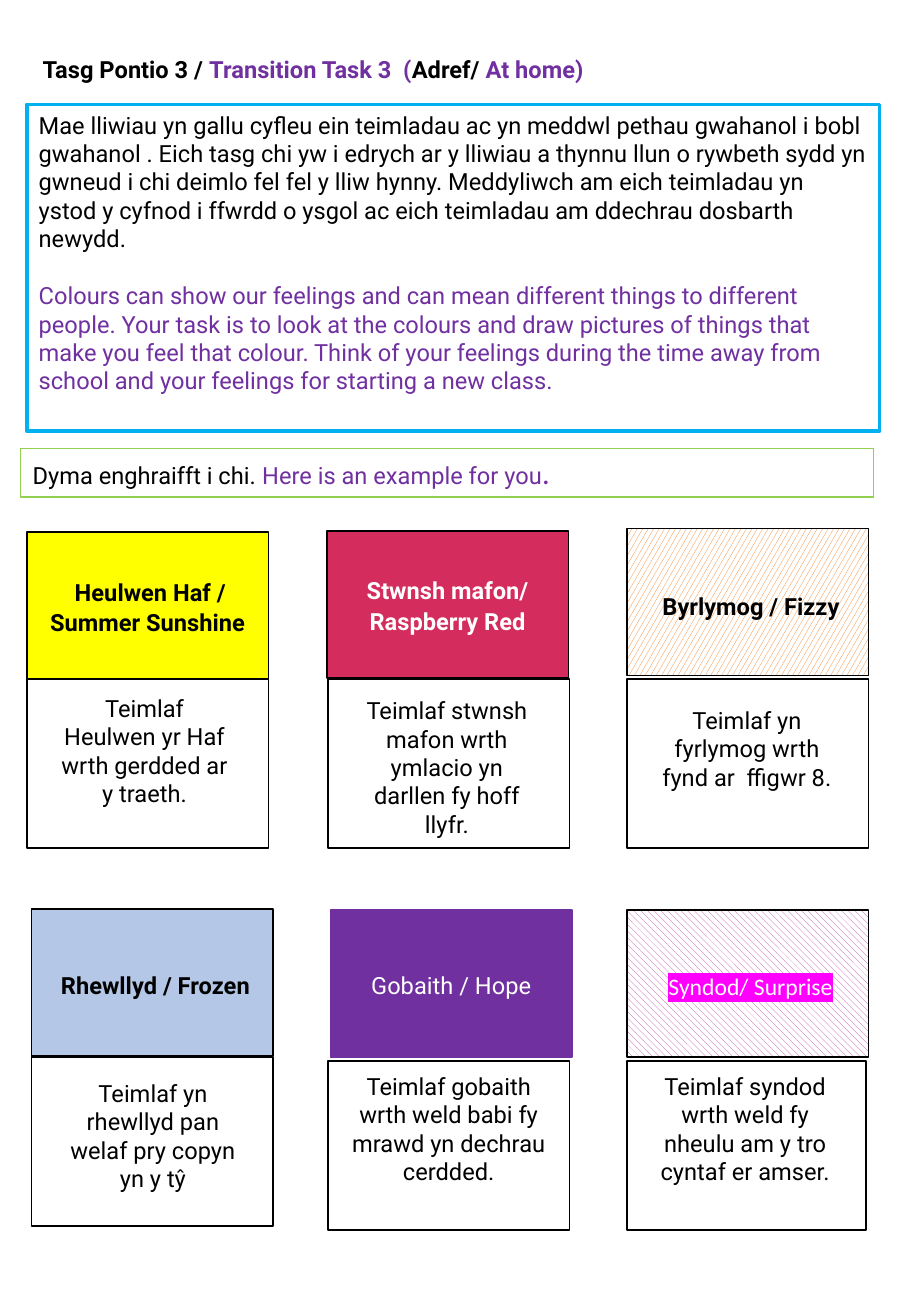
"""Build the bilingual Transition Task 3 worksheet about colours and feelings."""
from lxml import etree
from pptx import Presentation
from pptx.dml.color import RGBColor
from pptx.enum.dml import MSO_PATTERN
from pptx.enum.shapes import MSO_SHAPE
from pptx.enum.text import MSO_ANCHOR, MSO_AUTO_SIZE, PP_ALIGN
from pptx.oxml.ns import qn
from pptx.util import Pt

PX = 9144
RECTANGLE = MSO_SHAPE.RECTANGLE
CONFETTI = MSO_PATTERN.LARGE_CONFETTI
DIAGONAL = MSO_PATTERN.WIDE_DOWNWARD_DIAGONAL
TOP, MIDDLE = MSO_ANCHOR.TOP, MSO_ANCHOR.MIDDLE
LEFT, CENTER = PP_ALIGN.LEFT, PP_ALIGN.CENTER
NO_AUTOFIT = MSO_AUTO_SIZE.NONE
BLACK, WHITE, PURPLE = "000000", "FFFFFF", "7030A0"
hex_colour = RGBColor.from_string


def write(paragraph, text, size=14, font="Roboto", colour=BLACK, bold=False, highlight=None):
    run = paragraph.add_run()
    run.text = text
    run.font.size = Pt(size)
    run.font.bold = bold
    run.font.color.rgb = hex_colour(colour)
    if highlight:
        marker = etree.SubElement(run.font._element, qn("a:highlight"))
        etree.SubElement(marker, qn("a:srgbClr"), val=highlight)
    run.font.name = font


def add_box(bounds, line, weight=1, fill=None, pattern=None, anchor=TOP, align=LEFT):
    box = slide.shapes.add_shape(RECTANGLE, *[n * PX for n in bounds])
    box.shadow.inherit = False
    box.line.color.rgb = hex_colour(line)
    box.line.width = Pt(weight)
    if pattern:
        box.fill.patterned()
        box.fill.pattern = pattern
        box.fill.fore_color.rgb = hex_colour(fill)
        box.fill.back_color.rgb = hex_colour(WHITE)
    elif fill:
        box.fill.solid()
        box.fill.fore_color.rgb = hex_colour(fill)
    else:
        box.fill.background()
    box.text_frame.word_wrap = True
    box.text_frame.vertical_anchor = anchor
    box.text_frame.paragraphs[0].alignment = align
    return box.text_frame


deck = Presentation()
deck.slide_width, deck.slide_height = 750 * PX, 1083 * PX
slide = deck.slides.add_slide(deck.slide_layouts[5])

title = slide.shapes.title
title.left, title.top, title.width, title.height = [n * PX for n in (25, 40, 598, 57)]
title.text_frame.word_wrap = True
title.text_frame.auto_size = NO_AUTOFIT
title.text_frame.vertical_anchor = TOP
heading = title.text_frame.paragraphs[0]
heading.alignment = LEFT
for text, colour in [("Tasg Pontio 3 / ", BLACK), ("Transition Task 3  (", PURPLE),
                     ("Adref/ ", BLACK), ("At home)", PURPLE)]:
    write(heading, text, colour=colour, bold=True)

instructions = add_box((22, 86, 702, 269), "00B0F0", 2.25)
write(instructions.paragraphs[0],
      "Mae lliwiau yn gallu cyfleu ein teimladau ac yn meddwl pethau gwahanol i bobl gwahanol . "
      "Eich tasg chi yw i edrych ar y lliwiau a thynnu llun o rywbeth sydd yn gwneud i chi deimlo "
      "fel fel y lliw hynny. Meddyliwch am eich teimladau yn ystod y cyfnod i ffwrdd o ysgol ac "
      "eich teimladau am ddechrau dosbarth newydd.")
english = instructions.add_paragraph()
english.alignment = LEFT
english.space_before = Pt(17)
write(english,
      "Colours can show our feelings and can mean different things to different people. Your task "
      "is to look at the colours and draw pictures of things that make you feel that colour. Think "
      "of your feelings during the time away from school and your feelings for starting a new class.",
      colour=PURPLE)

example = add_box((17, 369, 702, 40), "92D050", 0.75).paragraphs[0]
write(example, "Dyma enghraifft i chi. ")
write(example, "Here is an example for you", colour=PURPLE)
write(example, ".", size=18, font="Calibri", colour=PURPLE)

bold = {"bold": True}
bold_white = {"bold": True, "colour": WHITE}
white = {"colour": WHITE}
marked = {"colour": WHITE, "font": "Calibri", "highlight": "FF00FF"}
cards = [
    ("Heulwen Haf / Summer Sunshine", bold, 14, "FFFF00", None, BLACK,
     (22, 438), (22, 559, 199, 139), (39, 566, 160, 128),
     "Teimlaf Heulwen yr Haf wrth gerdded ar y traeth."),
    ("Stwnsh mafon/ Raspberry Red", bold_white, None, "D42C5C", None, BLACK,
     (269, 437), (270, 559, 199, 139), (288, 568, 160, 128),
     "Teimlaf stwnsh mafon wrth ymlacio yn darllen fy hoff llyfr."),
    ("Byrlymog / Fizzy", bold, 18, "F27208", CONFETTI, BLACK,
     (516, 435), (516, 559, 199, 139), (535, 576, 160, 104),
     "Teimlaf yn fyrlymog wrth fynd ar  ffigwr 8."),
    ("Rhewllyd / Frozen", bold, 16, "B4C7E7", None, BLACK,
     (26, 748), (26, 870, 199, 139), (46, 883, 160, 104),
     "Teimlaf yn rhewllyd pan welaf pry copyn yn y tŷ"),
    ("Gobaith / Hope", white, None, PURPLE, None, PURPLE,
     (272, 749), (270, 873, 199, 139), (278, 877, 183, 128),
     "Teimlaf gobaith wrth weld babi fy mrawd yn dechrau cerdded."),
    ("Syndod/ Surprise", marked, 16, "BE429E", DIAGONAL, BLACK,
     (516, 749), (516, 873, 197, 139), (523, 877, 181, 128),
     "Teimlaf syndod wrth weld fy nheulu am y tro cyntaf er amser."),
]
for name, style, indent_size, fill, pattern, outline, corner, frame, note_area, feeling in cards:
    add_box(frame, BLACK)
    label = add_box((*corner, 199, 121), outline, 1, fill, pattern, MIDDLE, CENTER).paragraphs[0]
    label.line_spacing = 1.07
    label.space_after = Pt(8)
    if indent_size:
        write(label, " ", size=indent_size, font="Calibri")
    write(label, name, **style)

    note = slide.shapes.add_textbox(*[n * PX for n in note_area]).text_frame
    note.word_wrap = True
    note.paragraphs[0].alignment = CENTER
    write(note.paragraphs[0], feeling)

deck.save("out.pptx")
